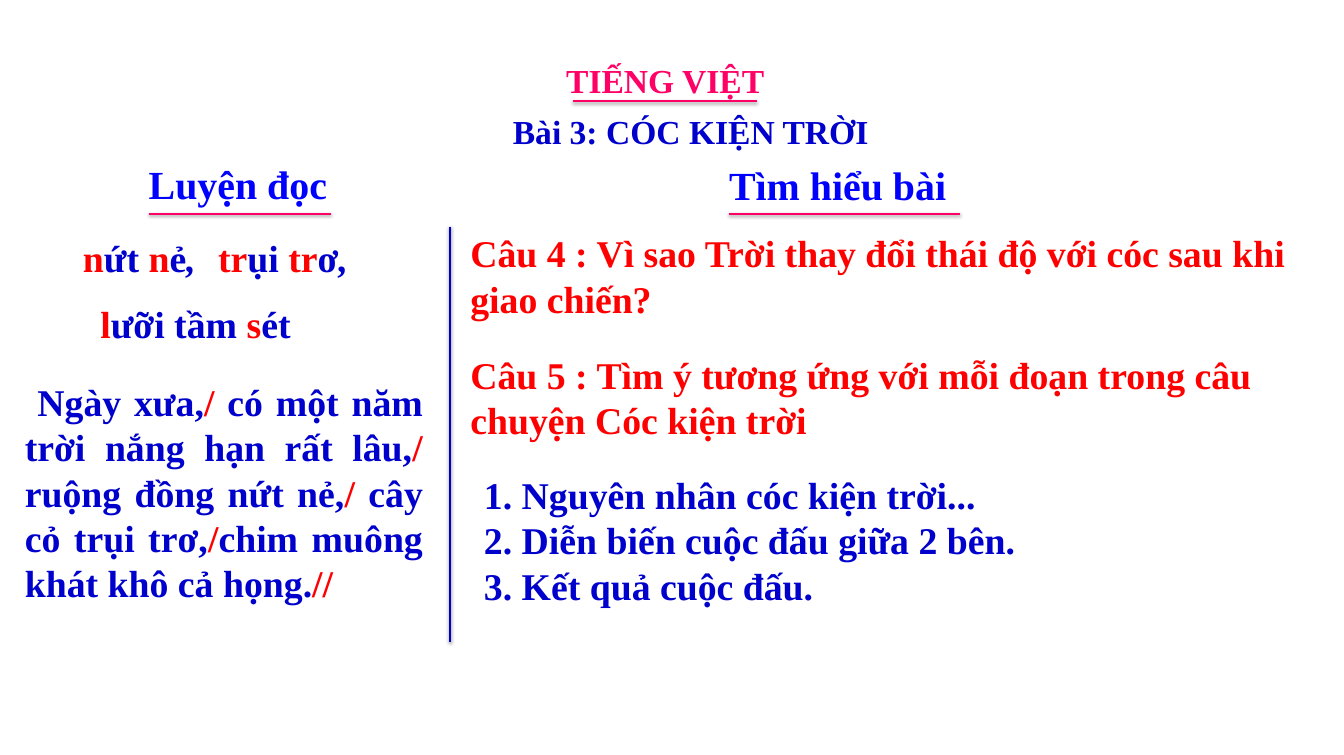
from dataclasses import dataclass

from lxml import etree
from pptx import Presentation
from pptx.dml.color import RGBColor
from pptx.enum import shapes, text
from pptx.oxml import ns
from pptx.util import Pt


@dataclass(frozen=True)
class Theme:
    font: str = "Times New Roman"
    pink: str = "FF0066"
    red: str = "FF0000"
    navy: str = "0000CC"
    blue: str = "0000FF"
    title: int = 32
    heading: int = 38
    body: int = 36
    rule: int = 2


THEME = Theme()
ALIGN = text.PP_ALIGN
SHADOW = (
    f'<a:effectLst xmlns:a="{ns.nsuri("a")}">'
    '<a:outerShdw blurRad="40000" dist="20000" dir="5400000" rotWithShape="0">'
    '<a:srgbClr val="000000"><a:alpha val="38000"/></a:srgbClr>'
    "</a:outerShdw></a:effectLst>"
)


def write(shape, content, *, size=THEME.body, color=THEME.navy, align=ALIGN.LEFT,
          inset=(7.2, 3.6), wrap=True, indent=0, italic_tail=""):
    """One paragraph per line; parts between bars are red."""
    frame = shape.text_frame
    frame.word_wrap = wrap
    frame.auto_size = text.MSO_AUTO_SIZE.NONE
    frame.vertical_anchor = text.MSO_ANCHOR.TOP
    frame.margin_left = frame.margin_right = Pt(inset[0])
    frame.margin_top = frame.margin_bottom = Pt(inset[1])
    for number, line in enumerate(content.split("\n")):
        paragraph = frame.add_paragraph() if number else frame.paragraphs[0]
        properties = paragraph._p.get_or_add_pPr()
        properties.set("marL", "0")
        properties.set("indent", str(Pt(indent)))
        etree.SubElement(properties, ns.qn("a:buNone"))
        paragraph.alignment = align
        paragraph.space_before = Pt(0)
        parts = [(part, THEME.red if i % 2 else color, False)
                 for i, part in enumerate(line.split("|")) if part]
        if italic_tail:
            parts.append((italic_tail, color, True))
        for part, part_color, italic in parts:
            run = paragraph.add_run()
            run.text = part
            run.font.name = THEME.font
            run.font.size = Pt(size)
            run.font.bold = True
            run.font.italic = italic
            run.font.color.rgb = RGBColor.from_string(part_color)


def add_text(slide, box, content, **style):
    write(slide.shapes.add_textbox(*map(Pt, box)), content, **style)


def fill_placeholder(placeholder, box, content, **style):
    placeholder.left, placeholder.top, placeholder.width, placeholder.height = map(Pt, box)
    write(placeholder, content, **style)


def add_rule(slide, x1, y1, x2, y2, color=THEME.pink):
    rule = slide.shapes.add_connector(
        shapes.MSO_CONNECTOR.STRAIGHT, Pt(x1), Pt(y1), Pt(x2), Pt(y2))
    rule.line.color.rgb = RGBColor.from_string(color)
    rule.line.width = Pt(THEME.rule)
    rule._element.spPr.append(etree.fromstring(SHADOW))


def add_heading(slide, box, content, rule_start, rule_end):
    add_text(slide, box, content, size=THEME.heading, color=THEME.blue,
             align=ALIGN.CENTER, inset=(5.8, 2.9), wrap=False)
    add_rule(slide, rule_start, 204, rule_end, 204)


def main():
    deck = Presentation()
    deck.slide_width, deck.slide_height = Pt(1281.6), Pt(720)
    slide = deck.slides.add_slide(deck.slide_layouts[1])
    lesson, answers = slide.placeholders

    # Subject and lesson title
    add_text(slide, (532.8, 54, 205.2, 46), "TIẾNG VIỆT",
             size=THEME.title, color=THEME.pink, wrap=False)
    add_rule(slide, 546.5, 96.5, 722, 96.5)
    fill_placeholder(lesson, (460.8, 100, 396, 50.4), "Bài 3: CÓC KIỆN TRỜI",
                     size=THEME.title, align=ALIGN.CENTER, inset=(11.5, 5.8))

    # Column headings and divider
    add_heading(slide, (135.4, 149, 182.9, 52), "Luyện đọc", 141.8, 315.4)
    add_heading(slide, (689, 150.5, 219.6, 52), "Tìm hiểu bài", 694.8, 915.8)
    add_rule(slide, 429, 216, 429, 612, THEME.navy)

    # Reading practice: words, then the passage with its pauses
    add_text(slide, (72, 220.3, 197.3, 51), "|n|ứt |n|ẻ",
             align=ALIGN.JUSTIFY, italic_tail=",")
    add_text(slide, (200.9, 220.3, 187.9, 51), "|tr|ụi |tr|ơ",
             align=ALIGN.JUSTIFY, italic_tail=",")
    add_text(slide, (88.6, 283, 228.2, 51), "|l|ưỡi tầm |s|ét", align=ALIGN.JUSTIFY)
    add_text(slide, (16.6, 357.8, 393.8, 225.4),
             "Ngày xưa,|/ |có một năm trời nắng hạn rất lâu,|/ |ruộng đồng nứt nẻ,|/ |"
             "cây cỏ trụi trơ,|/|chim muông khát khô cả họng.|//|",
             align=ALIGN.JUSTIFY, indent=12)

    # Comprehension: questions, then the answers
    questions = (
        (216, "Câu 4 : Vì sao Trời thay đổi thái độ với cóc sau khi giao chiến?"),
        (332, "Câu 5 : Tìm ý tương ứng với mỗi đoạn trong câu chuyện Cóc kiện trời"),
    )
    for top, question in questions:
        add_text(slide, (441.4, top, 805.7, 94.3), question, color=THEME.red)
    fill_placeholder(answers, (454.3, 446.4, 689.8, 138.2),
                     "1. Nguyên nhân cóc kiện trời...\n"
                     "2. Diễn biến cuộc đấu giữa 2 bên.\n"
                     "3. Kết quả cuộc đấu.")

    deck.save("out.pptx")


if __name__ == "__main__":
    main()
